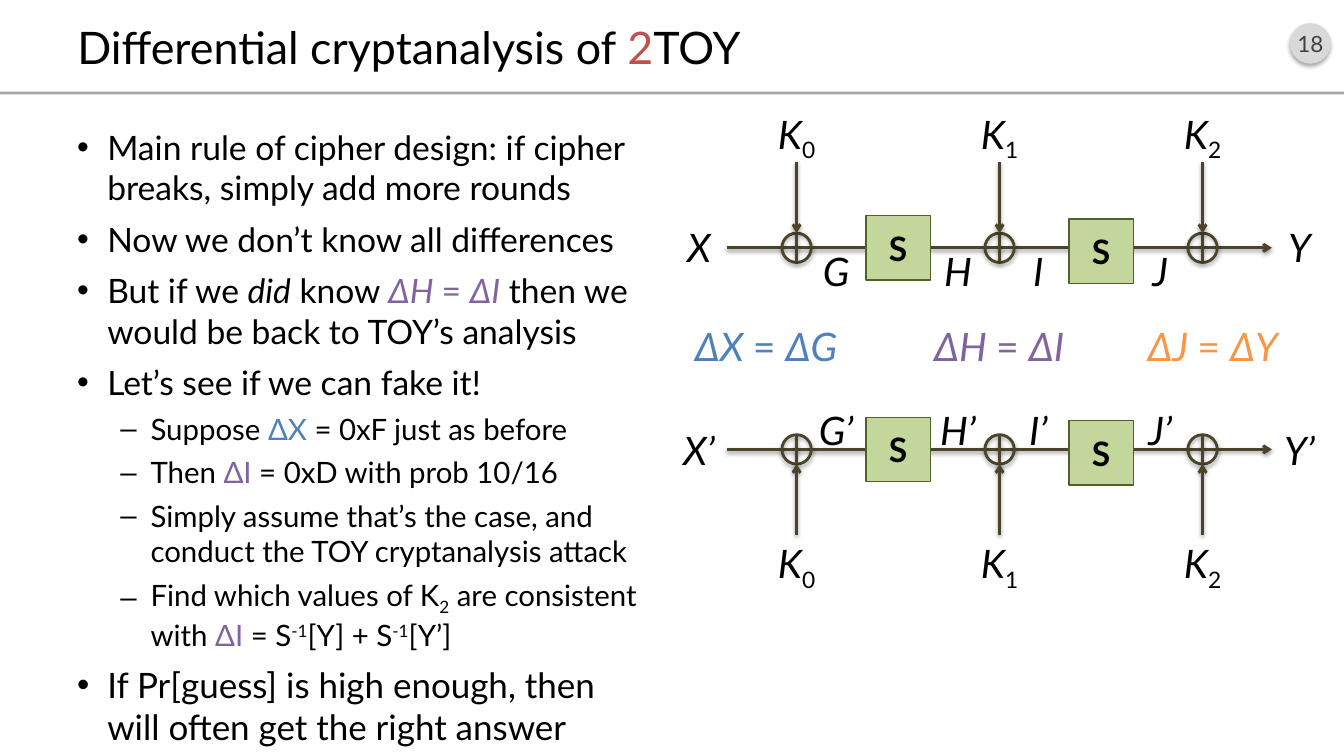
import pptx
import pptx.util
import pptx.oxml
import pptx.oxml.ns
import pptx.dml.color
import pptx.enum.text
import pptx.enum.shapes

Pt = pptx.util.Pt
qn = pptx.oxml.ns.qn
Kind = pptx.enum.shapes.MSO_SHAPE
Anchor = pptx.enum.text.MSO_ANCHOR
Align = pptx.enum.text.PP_ALIGN
NS = pptx.oxml.ns.nsdecls("a")

BLACK, BROWN, RED = "000000", "4A452A", "C0504D"
BLUE, PURPLE, ORANGE = "4F81BD", "8064A2", "F79646"
ITAL = {"italic": True}
SUB, SUP = {"base": -25000}, {"base": 30000}


def color(code):
    return pptx.dml.color.RGBColor.from_string(code)


class Deck:
    """Holds the text style and the current slide, and draws each kind of element."""

    def __init__(self, show):
        self.font = "Lato"
        self.slide = show.slides.add_slide(show.slide_layouts[5])
        self.shapes = self.slide.shapes

    def runs(self, para, parts, **base):
        for part in parts:
            text, own = (part, {}) if isinstance(part, str) else part
            run = para.add_run()
            run.text = text
            form = {"name": self.font, "hue": BLACK, **base, **own}
            run.font.color.rgb = color(form.pop("hue"))
            shift = form.pop("base", None)
            if shift:
                run._r.get_or_add_rPr().set("baseline", str(shift))
            for key, value in form.items():
                setattr(run.font, key, value)

    def frame(self, shape, side=7.2, anchor=Anchor.TOP):
        frame = shape.text_frame
        form = {"word_wrap": True, "vertical_anchor": anchor,
                "auto_size": pptx.enum.text.MSO_AUTO_SIZE.NONE,
                "margin_left": Pt(side), "margin_right": Pt(side),
                "margin_top": Pt(3.6), "margin_bottom": Pt(3.6)}
        for key, value in form.items():
            setattr(frame, key, value)
        return frame

    def title(self, box, parts):
        shape = self.shapes.title
        for key, value in zip(("left", "top", "width", "height"), box):
            setattr(shape, key, Pt(value))
        para = self.frame(shape, anchor=Anchor.MIDDLE).paragraphs[0]
        para.alignment = Align.LEFT
        self.runs(para, parts, size=Pt(32))

    def label(self, box, parts, side=7.2, **form):
        shape = self.shapes.add_textbox(*map(Pt, box))
        para = self.frame(shape, side).paragraphs[0]
        para.alignment = Align.CENTER
        self.runs(para, parts, **{"size": Pt(28), **form})

    def shape(self, kind, box, fill=None, edge=None, width=1, parts=(), shade=False, **form):
        shape = self.shapes.add_shape(kind, *map(Pt, box))
        shape.shadow.inherit = False
        if fill:
            shape.fill.solid()
            shape.fill.fore_color.rgb = color(fill)
        else:
            shape.fill.background()
        if edge:
            shape.line.color.rgb = color(edge)
            shape.line.width = Pt(width)
        else:
            shape.line.fill.background()
        if shade:
            self.shade(shape, 35, 1.8)
        if parts:
            para = self.frame(shape, 0, Anchor.MIDDLE).paragraphs[0]
            para.alignment = Align.CENTER
            self.runs(para, parts, **form)

    def shade(self, shape, alpha, dist):
        props = shape._element.spPr
        for old in props.findall(qn("a:effectLst")):
            props.remove(old)
        props.append(pptx.oxml.parse_xml(
            f'<a:effectLst {NS}><a:outerShdw blurRad="{Pt(3.1)}" dist="{Pt(dist)}" '
            f'dir="5400000" rotWithShape="0"><a:srgbClr val="{BLACK}">'
            f'<a:alpha val="{alpha}000"/></a:srgbClr></a:outerShdw></a:effectLst>'))

    def line(self, start, end, arrow=False):
        link = self.shapes.add_connector(
            pptx.enum.shapes.MSO_CONNECTOR.STRAIGHT, *map(Pt, (*start, *end)))
        link.line.color.rgb = color(BROWN)
        link.line.width = Pt(2)
        if arrow:
            link.line._get_or_add_ln().append(
                pptx.oxml.parse_xml(f'<a:tailEnd {NS} type="arrow"/>'))
        self.shade(link, 38, 1.6)

    def list(self, box, items):
        frame = self.frame(self.shapes.add_textbox(*map(Pt, box)))
        for num, (level, size, parts) in enumerate(items):
            para = frame.add_paragraph() if num else frame.paragraphs[0]
            para.level = level
            para.space_before = Pt((8, 6)[level])
            props = para._p.get_or_add_pPr()
            props.set("marL", str(Pt((21.6, 52.5)[level])))
            props.set("indent", str(-Pt(21.6)))
            props.append(pptx.oxml.parse_xml(f'<a:buFont {NS} typeface="Arial"/>'))
            props.append(pptx.oxml.parse_xml(f'<a:buChar {NS} char="{"•–"[level]}"/>'))
            self.runs(para, parts, size=Pt(size))


def delta(left, right, hue):
    return [(f"Δ{left} ", {"hue": hue, **ITAL}), ("= ", {"hue": hue}),
            (f"Δ{right}", {"hue": hue, **ITAL})]


def cipher(deck, rail, mark, ends, names, keys, stem, tip):
    deck.line((519, rail), (724, rail))
    deck.line((724, rail), (908.5, rail), arrow=True)
    for num in range(3):
        mid = 569 + 145 * num
        deck.label((mid - 27.5, keys, 55, 41), [("K", ITAL), (str(num), SUB)])
        deck.shape(Kind.OVAL, (mid - 10.5, rail - 10.5, 21, 21),
                   edge=BROWN, width=2, shade=True)
        deck.line((mid, rail - 10.5), (mid, rail + 10.5))
        deck.line((mid, stem), (mid, tip), arrow=True)
    for num in range(2):
        deck.shape(Kind.RECTANGLE, (618.5 + 145 * num, rail - 23 + 2.5 * num, 46, 46),
                   "C3D69B", "4F6228", parts=["S"], size=Pt(24), bold=True)
    spots = [(479.5, ends), (577.5, names), (664.5, names),
             (722, names), (809, names), (908.5, ends)]
    for (left, top), name in zip(spots, "XGHIJY"):
        side = 0 if name == "H" else 7.2
        deck.label((left, top, 39.5, 41), [name + mark], side, **ITAL)


def main():
    show = pptx.Presentation()
    show.slide_width, show.slide_height = Pt(960), Pt(540)
    deck = Deck(show)
    deck.shape(Kind.OVAL, (921.5, 16.5, 29, 29), "D9D9D9", parts=["18"],
               shade=True, size=Pt(16), hue="404040")
    deck.shape(Kind.RECTANGLE, (0, 65.5, 960, 2), "A6A6A6")
    deck.title((48, 11.5, 864, 43),
               ["Differential cryptanalysis of ", ("2", {"hue": RED}), "TOY"])
    blue, purple = {"hue": BLUE}, {"hue": PURPLE}
    deck.list((48, 87, 415, 414), [
        (0, 24, ["Main rule of cipher design: if cipher breaks, simply add more rounds"]),
        (0, 24, ["Now we don’t know all differences"]),
        (0, 24, ["But if we ", ("did", ITAL), " know ", *delta("H", "I", PURPLE),
                 " then we would be back to TOY’s analysis"]),
        (0, 24, ["Let’s see if we can fake it!"]),
        (1, 21, ["Suppose ", ("ΔX ", blue), "= 0xF just as before"]),
        (1, 21, ["Then ", ("ΔI ", purple), "= 0xD with prob 10/16"]),
        (1, 21, ["Simply assume that’s the case, and conduct the TOY cryptanalysis attack"]),
        (1, 21, ["Find which values of K", ("2", SUB), " are consistent with ",
                 ("ΔI", purple), " = S", ("-1", SUP), "[Y] + S", ("-1", SUP), "[Y’]"]),
        (0, 25, ["If Pr[guess] is high enough, then will often get the right answer"]),
    ])
    cipher(deck, 177, "", 156, 173, 75, 116, 166.5)
    cipher(deck, 321, "’", 301, 286.5, 382, 382, 331.5)
    for left, pair, hue in ((490, "XG", BLUE), (656.5, "HI", PURPLE), (809, "JY", ORANGE)):
        deck.label((left, 227, 114.5, 41), delta(*pair, hue), 0)
    show.save("out.pptx")


if __name__ == "__main__":
    main()
